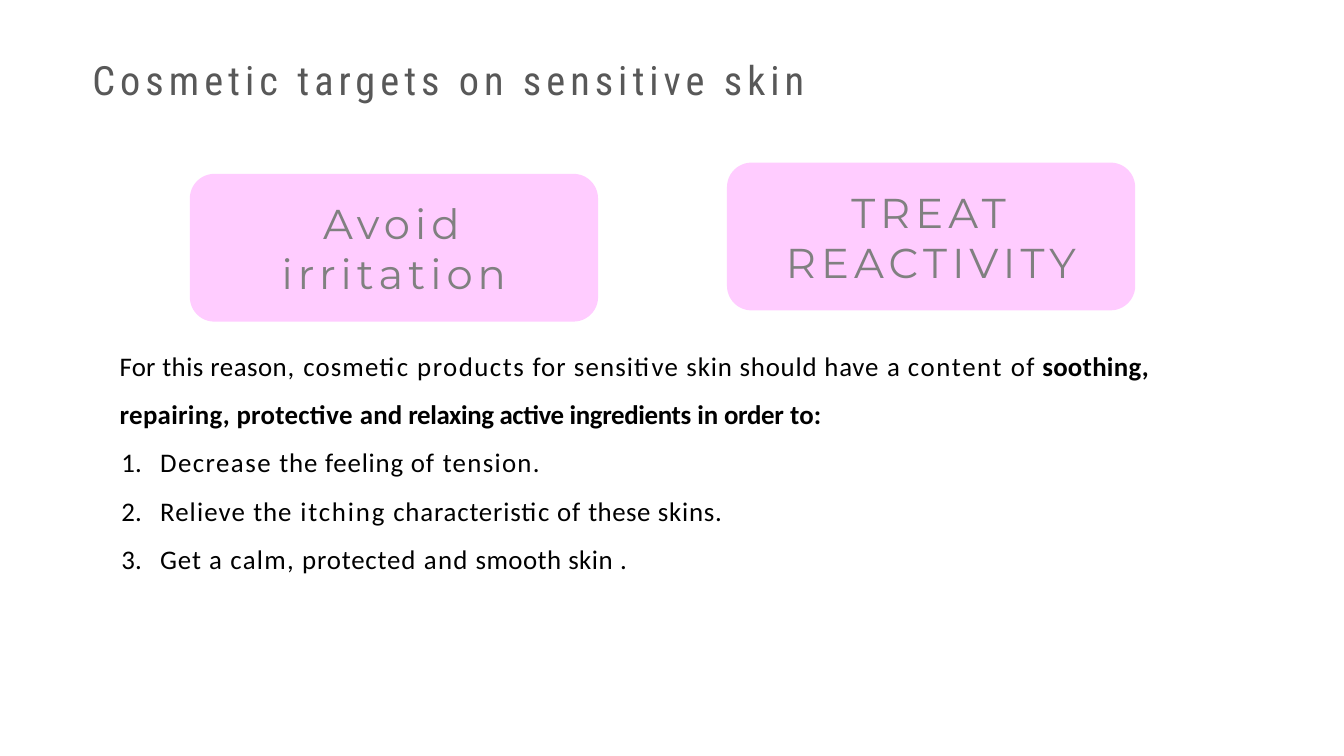
import pptx
import pptx.dml.color
import pptx.enum.shapes
import pptx.enum.text
import pptx.util
from lxml import etree

Pt = pptx.util.Pt
PINK = pptx.dml.color.RGBColor(0xFF, 0xCC, 0xFF)
GREY = pptx.dml.color.RGBColor(0x80, 0x80, 0x80)
DARK_GREY = pptx.dml.color.RGBColor(0x58, 0x58, 0x58)
BLACK = pptx.dml.color.RGBColor(0, 0, 0)


def add_text(paragraph, text, *, font, size, color, spacing=0, bold=False):
    """Append a run; spacing is the gap between letters in points."""
    run = paragraph.add_run()
    run.text = text
    run.font.name = font
    run.font.size = Pt(size)
    run.font.color.rgb = color
    run.font.bold = bold
    run._r.get_or_add_rPr().set("spc", str(round(spacing * 100)))


def prepare_frame(shape, side_margin=0):
    frame = shape.text_frame
    frame.word_wrap = True
    frame.margin_left = frame.margin_right = Pt(side_margin)
    frame.margin_top = frame.margin_bottom = 0
    return frame


presentation = pptx.Presentation()
presentation.slide_width = Pt(800)
presentation.slide_height = Pt(450)
slide = presentation.slides.add_slide(presentation.slide_layouts[6])

# Title
title = slide.shapes.add_textbox(Pt(55), Pt(36), Pt(447), Pt(26))
title_frame = prepare_frame(title)
title_frame.vertical_anchor = pptx.enum.text.MSO_ANCHOR.MIDDLE
title_paragraph = title_frame.paragraphs[0]
title_paragraph.line_spacing = 0.9
add_text(title_paragraph, "Cosmetic targets on sensitive skin",
         font="Roboto Condensed", size=24, color=DARK_GREY, spacing=3)

# Target cards
for left, top, target in [(113, 103.5, "Avoid irritation"),
                          (432.7, 96.8, "TREAT REACTIVITY")]:
    card = slide.shapes.add_shape(pptx.enum.shapes.MSO_SHAPE.ROUNDED_RECTANGLE,
                                  Pt(left), Pt(top), Pt(243), Pt(88))
    card.shadow.inherit = False
    card.fill.solid()
    card.fill.fore_color.rgb = PINK
    card.line.fill.background()
    card_frame = prepare_frame(card, side_margin=15)
    card_frame.vertical_anchor = pptx.enum.text.MSO_ANCHOR.MIDDLE
    card_paragraph = card_frame.paragraphs[0]
    card_paragraph.alignment = pptx.enum.text.PP_ALIGN.CENTER
    add_text(card_paragraph, target,
             font="Montserrat", size=24.8, color=GREY, spacing=3)

# Explanation: runs of text with their letter spacing
reason = [("For", 0.1), (" this reason", 0.3), (",", 1), (" cosmetic", 0.7),
          (" products", 0.9), (" for", 0.6), (" sensitive", 0.7),
          (" skin should have", 0.5), (" a ", 0.6), ("content", 1), (" of", 0.8)]
ingredients = [(" soothing, repairing, protective", 0.2), (" and", 0.1),
               (" relaxing active ingredients", -0.2), (" in", 0),
               (" order", -0.2), (" to", 0.1), (":", 0.6)]
goals = [
    [("Decrease", 0.9), (" the feeling of", 0.5), (" tension.", 0.8)],
    [("Relieve", 0.7), (" the", 0.5), (" itching", 1.1),
     (" characteristic of", 0.5), (" these ", 0.3), ("skins.", 0.5)],
    [("Get a", 0.6), (" calm,", 0.8), (" protected", 0.5), (" and", 0.8),
     (" smooth skin ", 0.3), (".", 0.5)],
]
body_format = {"font": "Calibri", "size": 16, "color": BLACK}

body = slide.shapes.add_textbox(Pt(71.3), Pt(198.5), Pt(673), Pt(142))
body_frame = prepare_frame(body)
introduction = body_frame.paragraphs[0]
introduction.line_spacing = 1.5
for runs, bold in [(reason, False), (ingredients, True)]:
    for text, spacing in runs:
        add_text(introduction, text, spacing=spacing, bold=bold, **body_format)

for goal in goals:
    paragraph = body_frame.add_paragraph()
    properties = paragraph._p.get_or_add_pPr()
    properties.set("marL", str(Pt(24)))
    properties.set("indent", str(-Pt(23)))
    numbering = etree.SubElement(properties, pptx.oxml.ns.qn("a:buAutoNum"))
    numbering.set("type", "arabicPeriod")
    paragraph.space_before = Pt(9.5)
    for text, spacing in goal:
        add_text(paragraph, text, spacing=spacing, **body_format)

presentation.save("out.pptx")
